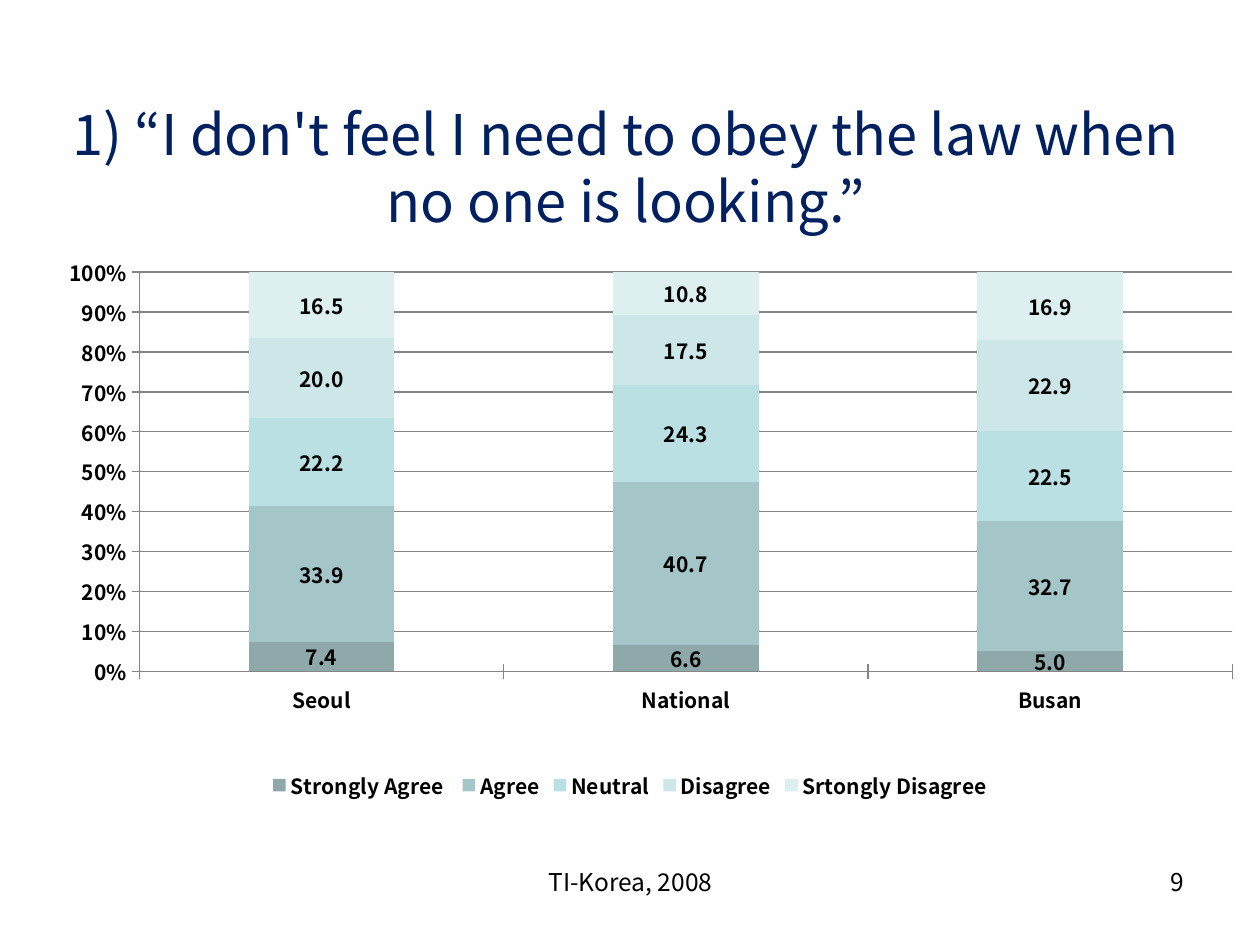
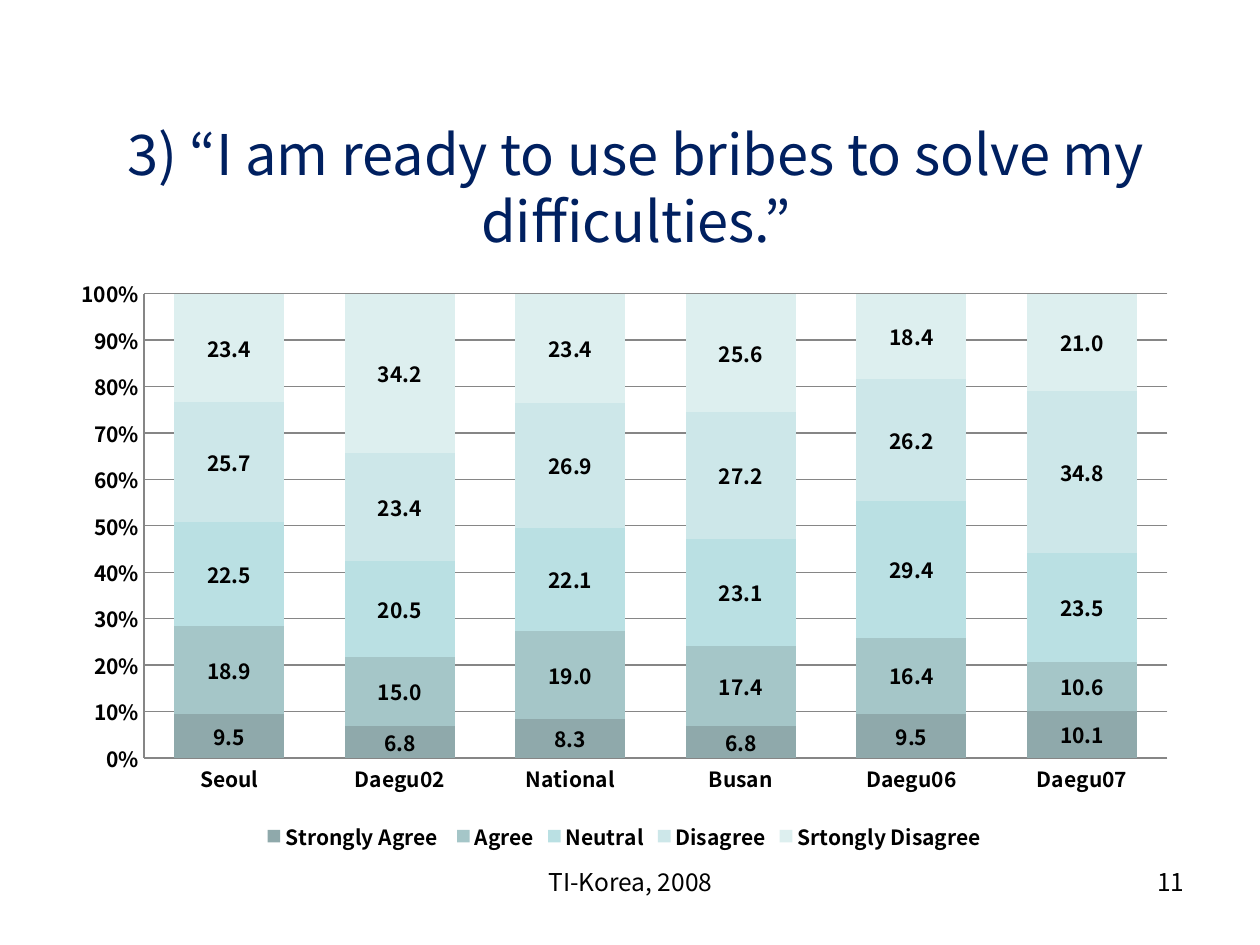
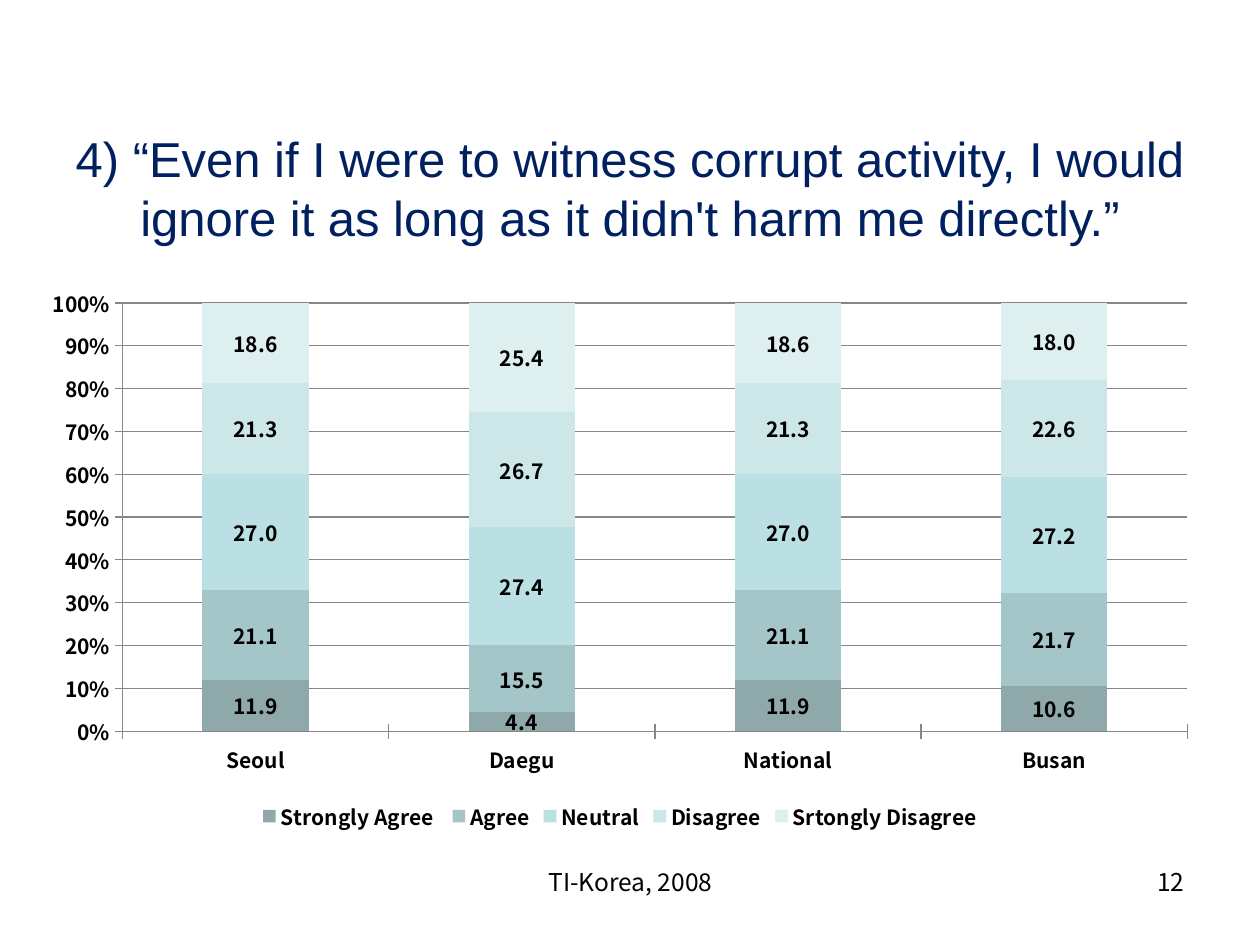
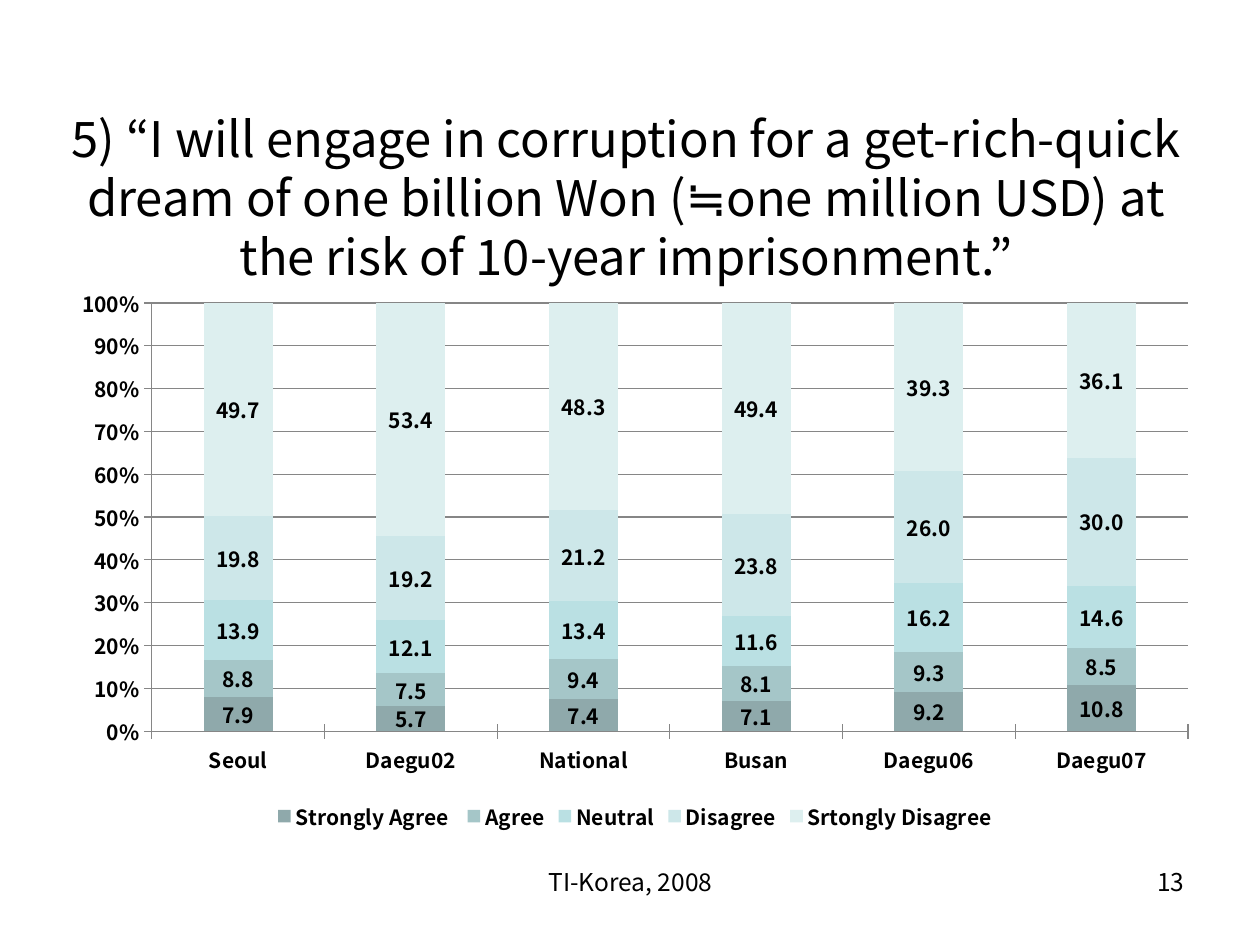
from dataclasses import dataclass

import lxml.etree
import pptx
import pptx.chart.data
import pptx.dml.color
import pptx.enum.chart
import pptx.enum.text
import pptx.oxml
import pptx.oxml.ns
import pptx.util

ALIGN = pptx.enum.text.PP_ALIGN
ANCHOR = pptx.enum.text.MSO_ANCHOR
TICK = pptx.enum.chart.XL_TICK_MARK
qn = pptx.oxml.ns.qn


@dataclass(frozen=True)
class Theme:
    font: str = "Noto Sans CJK KR"
    latin: str = "Arial"
    navy: str = "002060"
    black: str = "000000"
    grid: str = "868686"
    answers: tuple = ("8FA9AB", "A5C6C8", "BAE0E3", "CDE7E9", "DDEFEF")
    title: int = 32
    long_title: int = 28
    footer: int = 14
    chart: int = 12


THEME = Theme()
FOOTER = "TI-Korea, 2008"
ANSWERS = ("Strongly Agree ", "Agree", "Neutral", "Disagree", "Srtongly Disagree")

SURVEYS = (
    dict(
        number=9,
        title="1) “I don't feel I need to obey the law when no one is looking.”",
        title_box=(59, 88, 1134, 158),
        chart_box=(9, 137, 1242, 669),
        plot=(0.105, 0.202, 0.88, 0.597),
        results={
            "Seoul": (7.4, 33.9, 22.2, 20.0, 16.5),
            "National": (6.6, 40.7, 24.3, 17.5, 10.8),
            "Busan": (5.0, 32.7, 22.5, 22.9, 16.9),
        },
    ),
    dict(
        number=11,
        title="3) “I am ready to use bribes to solve my difficulties.”",
        title_box=(69, 108, 1134, 158),
        chart_box=(59, 266, 1131, 591),
        gap=55,
        tick=TICK.NONE,
        results={
            "Seoul": (9.5, 18.9, 22.5, 25.7, 23.4),
            "Daegu02": (6.8, 15.0, 20.5, 23.4, 34.2),
            "National": (8.3, 19.0, 22.1, 26.9, 23.4),
            "Busan": (6.8, 17.4, 23.1, 27.2, 25.6),
            "Daegu06": (9.5, 16.4, 29.4, 26.2, 18.4),
            "Daegu07": (10.1, 10.6, 23.5, 34.8, 21.0),
        },
    ),
    dict(
        number=12,
        title="4) “Even if I were to witness corrupt activity, I would ignore it "
              "as long as it didn't harm me directly.”",
        title_box=(63, 98, 1134, 178),
        title_format=dict(size=THEME.long_title, font=THEME.latin),
        chart_box=(29, 276, 1182, 561),
        results={
            "Seoul": (11.9, 21.1, 27.0, 21.3, 18.6),
            "Daegu": (4.4, 15.5, 27.4, 26.7, 25.4),
            "National": (11.9, 21.1, 27.0, 21.3, 18.6),
            "Busan": (10.6, 21.7, 27.2, 22.6, 18.0),
        },
    ),
    dict(
        number=13,
        title="5) “I will engage in corruption for a get-rich-quick dream of one "
              "billion Won (≒one million USD) at the risk of 10-year imprisonment.”",
        title_box=(59, 118, 1134, 158),
        title_format=dict(size=THEME.long_title, color=THEME.black),
        chart_box=(59, 276, 1152, 561),
        results={
            "Seoul": (7.9, 8.8, 13.9, 19.8, 49.7),
            "Daegu02": (5.7, 7.5, 12.1, 19.2, 53.4),
            "National": (7.4, 9.4, 13.4, 21.2, 48.3),
            "Busan": (7.1, 8.1, 11.6, 23.8, 49.4),
            "Daegu06": (9.2, 9.3, 16.2, 26.0, 39.3),
            "Daegu07": (10.8, 8.5, 14.6, 30.0, 36.1),
        },
    ),
)


def px(n):
    return round(n * 914400 / 126)


def rgb(color):
    return pptx.dml.color.RGBColor.from_string(color)


def write(tf, text, *, size, color=THEME.black, font=THEME.font,
          align=ALIGN.CENTER, anchor=ANCHOR.TOP):
    tf.word_wrap = True
    tf.auto_size = pptx.enum.text.MSO_AUTO_SIZE.NONE
    tf.vertical_anchor = anchor
    p = tf.paragraphs[0]
    p.alignment = align
    r = p.add_run()
    r.text = text
    r.font.size = pptx.util.Pt(size)
    r.font.name = font
    r.font.color.rgb = rgb(color)
    lxml.etree.SubElement(r.font._element, qn("a:ea"), typeface=font)


class Deck:
    """Builds slides in one style, keeping the current slide at hand."""

    def __init__(self, theme):
        self.theme = theme
        self.prs = pptx.Presentation()
        self.prs.slide_width, self.prs.slide_height = px(1260), px(945)
        self.s = None

    def slide(self):
        self.s = self.prs.slides.add_slide(self.prs.slide_layouts[5])

    def title(self, text, box, **fmt):
        sp = self.s.shapes.title
        sp.left, sp.top, sp.width, sp.height = map(px, box)
        style = dict(size=self.theme.title, color=self.theme.navy, anchor=ANCHOR.MIDDLE)
        write(sp.text_frame, text, **(style | fmt))

    def text(self, text, box, **fmt):
        sp = self.s.shapes.add_textbox(*map(px, box))
        write(sp.text_frame, text, **fmt)

    def footer(self, number):
        size = self.theme.footer
        self.text(FOOTER, (431, 861, 399, 66), size=size)
        self.text(str(number), (903, 861, 294, 66), size=size, align=ALIGN.RIGHT)

    def chart(self, results, box, gap=150, tick=TICK.CROSS, plot=None):
        data = pptx.chart.data.CategoryChartData(number_format="0.0")
        data.categories = list(results)
        for name, values in zip(ANSWERS, zip(*results.values())):
            data.add_series(name, values)
        kind = pptx.enum.chart.XL_CHART_TYPE.COLUMN_STACKED_100
        chart = self.s.shapes.add_chart(kind, *map(px, box), data).chart
        chart.has_title = False
        chart.font.name = self.theme.font
        chart.font.size = pptx.util.Pt(self.theme.chart)
        chart.font.bold = True
        chart.font.color.rgb = rgb(self.theme.black)
        self.bars(chart.plots[0], gap)
        self.axes(chart, tick)
        chart.has_legend = True
        chart.legend.position = pptx.enum.chart.XL_LEGEND_POSITION.BOTTOM
        chart.legend.include_in_layout = False
        space = chart._chartSpace
        space.find(qn("c:chart")).addnext(pptx.oxml.parse_xml(
            f"<c:spPr {pptx.oxml.ns.nsdecls('c', 'a')}><a:noFill/>"
            "<a:ln><a:noFill/></a:ln></c:spPr>"))
        if plot:
            self.place_plot(space.find(".//" + qn("c:plotArea")), plot)

    def bars(self, bars, gap):
        bars.gap_width, bars.overlap = gap, 100
        bars.vary_by_categories = False
        for series, color in zip(bars.series, self.theme.answers):
            series.format.fill.solid()
            series.format.fill.fore_color.rgb = rgb(color)
            series.format.line.fill.background()
            labels = series.data_labels
            labels.show_value = True
            labels.number_format = "0.0"
            labels.number_format_is_linked = False

    def axes(self, chart, tick):
        axis = chart.value_axis
        axis.minimum_scale, axis.maximum_scale, axis.major_unit = 0, 1, 0.1
        axis.has_major_gridlines = True
        axis.tick_labels.number_format = "0%"
        axis.tick_labels.number_format_is_linked = False
        for line in (axis.format.line, axis.major_gridlines.format.line,
                     chart.category_axis.format.line):
            line.color.rgb = rgb(self.theme.grid)
            line.width = pptx.util.Pt(0.75)
        for ax in (axis, chart.category_axis):
            ax.major_tick_mark = tick
            ax.minor_tick_mark = TICK.NONE

    def place_plot(self, area, plot):
        for old in area.findall(qn("c:layout")):
            area.remove(old)
        layout = lxml.etree.Element(qn("c:layout"))
        manual = lxml.etree.SubElement(layout, qn("c:manualLayout"))
        fields = dict(layoutTarget="inner", xMode="edge", yMode="edge")
        fields |= zip("xywh", plot)
        for tag, value in fields.items():
            lxml.etree.SubElement(manual, qn(f"c:{tag}"), val=str(value))
        area.insert(0, layout)


def main():
    deck = Deck(THEME)
    for survey in SURVEYS:
        deck.slide()
        deck.title(survey["title"], survey["title_box"], **survey.get("title_format", {}))
        deck.footer(survey["number"])
        options = {k: survey[k] for k in ("gap", "tick", "plot") if k in survey}
        deck.chart(survey["results"], survey["chart_box"], **options)
    deck.prs.save("out.pptx")


if __name__ == "__main__":
    main()
